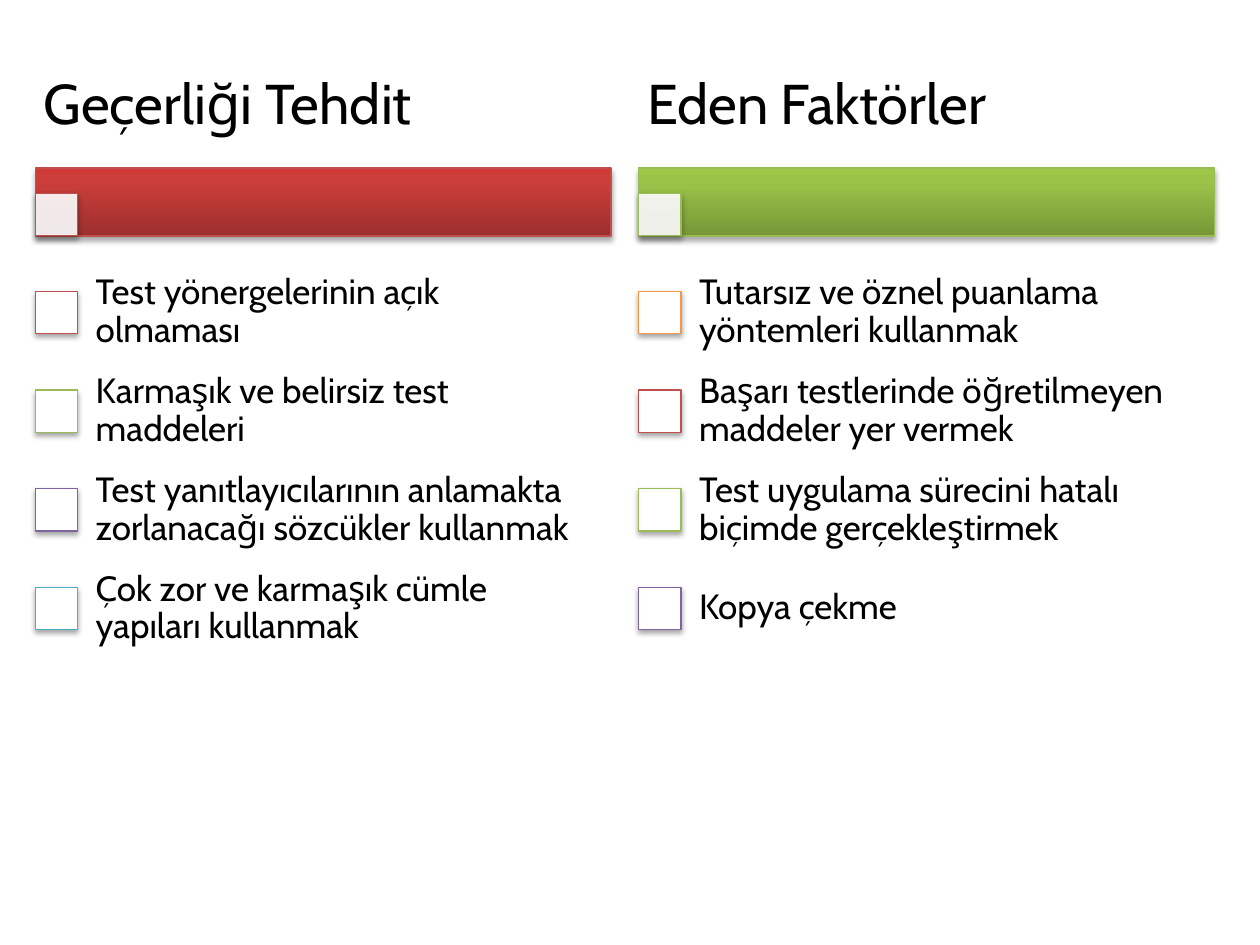
from dataclasses import dataclass

from lxml import etree
from pptx import Presentation
from pptx import util as u
from pptx.dml.color import RGBColor
from pptx.enum import shapes, text
from pptx.oxml import parse_xml
from pptx.oxml.ns import nsdecls, qn

Pt = u.Pt

BLACK = RGBColor(0x00, 0x00, 0x00)
WHITE = RGBColor(0xFF, 0xFF, 0xFF)
RED = RGBColor(0xC0, 0x50, 0x4D)
GREEN = RGBColor(0x9B, 0xBB, 0x59)
PURPLE = RGBColor(0x80, 0x64, 0xA2)
AQUA = RGBColor(0x4B, 0xAC, 0xC6)
ORANGE = RGBColor(0xF7, 0x96, 0x46)
RED_SHADES = (RGBColor(0x9C, 0x2F, 0x2D), RGBColor(0xCB, 0x3E, 0x3A), RGBColor(0xCE, 0x3B, 0x37))
GREEN_SHADES = (RGBColor(0x77, 0x97, 0x37), RGBColor(0x9B, 0xC3, 0x48), RGBColor(0x9D, 0xC7, 0x46))
SHADE_STOPS = (0, 80, 100)

FONT = "Cabin"
COLUMN_LEFT, COLUMN_PITCH, COLUMN_WIDTH = 20.2, 344.8, 329
HEADING_TOP, HEADING_HEIGHT = 26, 70
BAR_TOP, BAR_HEIGHT = 96, 38.8
BOX_SIZE = 24.2
ITEM_TOP, ITEM_PITCH, ITEM_INDENT = 150.4, 56.4, 23
ITEM_INSET = 11.5


@dataclass
class Item:
    wording: str
    color: RGBColor


@dataclass
class Column:
    heading: str
    placeholder: int
    color: RGBColor
    shades: tuple[RGBColor, ...]
    items: list[Item]


COLUMNS = [
    Column("Geçerliği Tehdit", 0, RED, RED_SHADES, [
        Item("Test yönergelerinin açık olmaması", RED),
        Item("Karmaşık ve belirsiz test maddeleri", GREEN),
        Item("Test yanıtlayıcılarının anlamakta zorlanacağı sözcükler kullanmak", PURPLE),
        Item("Çok zor ve karmaşık cümle yapıları kullanmak", AQUA),
    ]),
    Column("Eden Faktörler", 3, GREEN, GREEN_SHADES, [
        Item("Tutarsız ve öznel puanlama yöntemleri kullanmak", ORANGE),
        Item("Başarı testlerinde öğretilmeyen maddeler yer vermek", RED),
        Item("Test uygulama sürecini hatalı biçimde gerçekleştirmek", GREEN),
        Item("Kopya çekme", PURPLE),
    ]),
]


def add_rectangle(slide, left: float, top: float, width: float, height: float, line: RGBColor):
    """Add a white outlined rectangle with a soft shadow below it."""
    shape = slide.shapes.add_shape(
        shapes.MSO_SHAPE.RECTANGLE, Pt(left), Pt(top), Pt(width), Pt(height))
    shape.fill.solid()
    shape.fill.fore_color.rgb = WHITE
    shape.line.color.rgb = line
    shape.line.width = Pt(0.75)
    shape.shadow.inherit = False
    effects = shape.element.spPr.find(qn("a:effectLst"))
    effects.append(parse_xml(
        f'<a:outerShdw {nsdecls("a")} blurRad="{Pt(3.1)}" dist="{Pt(1.8)}" dir="5400000" '
        f'rotWithShape="0"><a:srgbClr val="{BLACK}"><a:alpha val="35000"/></a:srgbClr></a:outerShdw>'))
    return shape


def shade(shape, colors: tuple[RGBColor, ...]) -> None:
    """Replace the solid fill by a gradient from bottom to top."""
    stops = "".join(
        f'<a:gs pos="{stop * 1000}"><a:srgbClr val="{color}"/></a:gs>'
        for stop, color in zip(SHADE_STOPS, colors))
    properties = shape.element.spPr
    properties.replace(properties.find(qn("a:solidFill")), parse_xml(
        f'<a:gradFill {nsdecls("a")} rotWithShape="1"><a:gsLst>{stops}</a:gsLst>'
        '<a:lin ang="16200000" scaled="0"/></a:gradFill>'))


def set_opacity(shape, percent: int) -> None:
    color = shape.element.spPr.find(qn("a:solidFill")).find(qn("a:srgbClr"))
    etree.SubElement(color, qn("a:alpha"), val=str(percent * 1000))


def write(shape, wording: str, size: float, inset_x: float, inset_y: float) -> None:
    frame = shape.text_frame
    frame.word_wrap = True
    frame.auto_size = text.MSO_AUTO_SIZE.NONE
    frame.vertical_anchor = text.MSO_ANCHOR.MIDDLE
    frame.margin_left = frame.margin_right = Pt(inset_x)
    frame.margin_top = frame.margin_bottom = Pt(inset_y)
    paragraph = frame.paragraphs[0]
    paragraph.text = wording
    paragraph.alignment = text.PP_ALIGN.LEFT
    paragraph.line_spacing = 0.9
    paragraph.space_before = Pt(0)
    paragraph.font.name = FONT
    paragraph.font.size = Pt(size)
    paragraph.font.bold = False
    paragraph.font.color.rgb = BLACK


def add_heading(slide, column: Column, left: float) -> None:
    heading = next(shape for shape in slide.placeholders
                   if shape.placeholder_format.idx == column.placeholder)
    heading.left, heading.top = Pt(left), Pt(HEADING_TOP)
    heading.width, heading.height = Pt(COLUMN_WIDTH), Pt(HEADING_HEIGHT)
    write(heading, column.heading, 32, 4.8, 3.2)


def add_item(slide, item: Item, left: float, top: float) -> None:
    add_rectangle(slide, left, top + (ITEM_PITCH - BOX_SIZE) / 2, BOX_SIZE, BOX_SIZE, item.color)
    label = slide.shapes.add_textbox(
        Pt(left + ITEM_INDENT), Pt(top), Pt(COLUMN_WIDTH - ITEM_INDENT), Pt(ITEM_PITCH))
    write(label, item.wording, 20, ITEM_INSET, ITEM_INSET)


def add_column(slide, column: Column, left: float) -> None:
    add_heading(slide, column, left)
    bar = add_rectangle(slide, left, BAR_TOP, COLUMN_WIDTH, BAR_HEIGHT, column.color)
    shade(bar, column.shades)
    corner = add_rectangle(
        slide, left, BAR_TOP + BAR_HEIGHT - BOX_SIZE, BOX_SIZE, BOX_SIZE, column.color)
    set_opacity(corner, 90)
    for row, item in enumerate(column.items):
        add_item(slide, item, left, ITEM_TOP + row * ITEM_PITCH)


def main() -> None:
    presentation = Presentation()
    presentation.slide_width, presentation.slide_height = Pt(720), Pt(540)
    comparison_layout = presentation.slide_layouts[4]
    slide = presentation.slides.add_slide(comparison_layout)
    for index, column in enumerate(COLUMNS):
        add_column(slide, column, COLUMN_LEFT + index * COLUMN_PITCH)
    for placeholder in list(slide.placeholders):
        if not placeholder.text_frame.text:
            placeholder.element.getparent().remove(placeholder.element)
    presentation.save("out.pptx")


if __name__ == "__main__":
    main()
